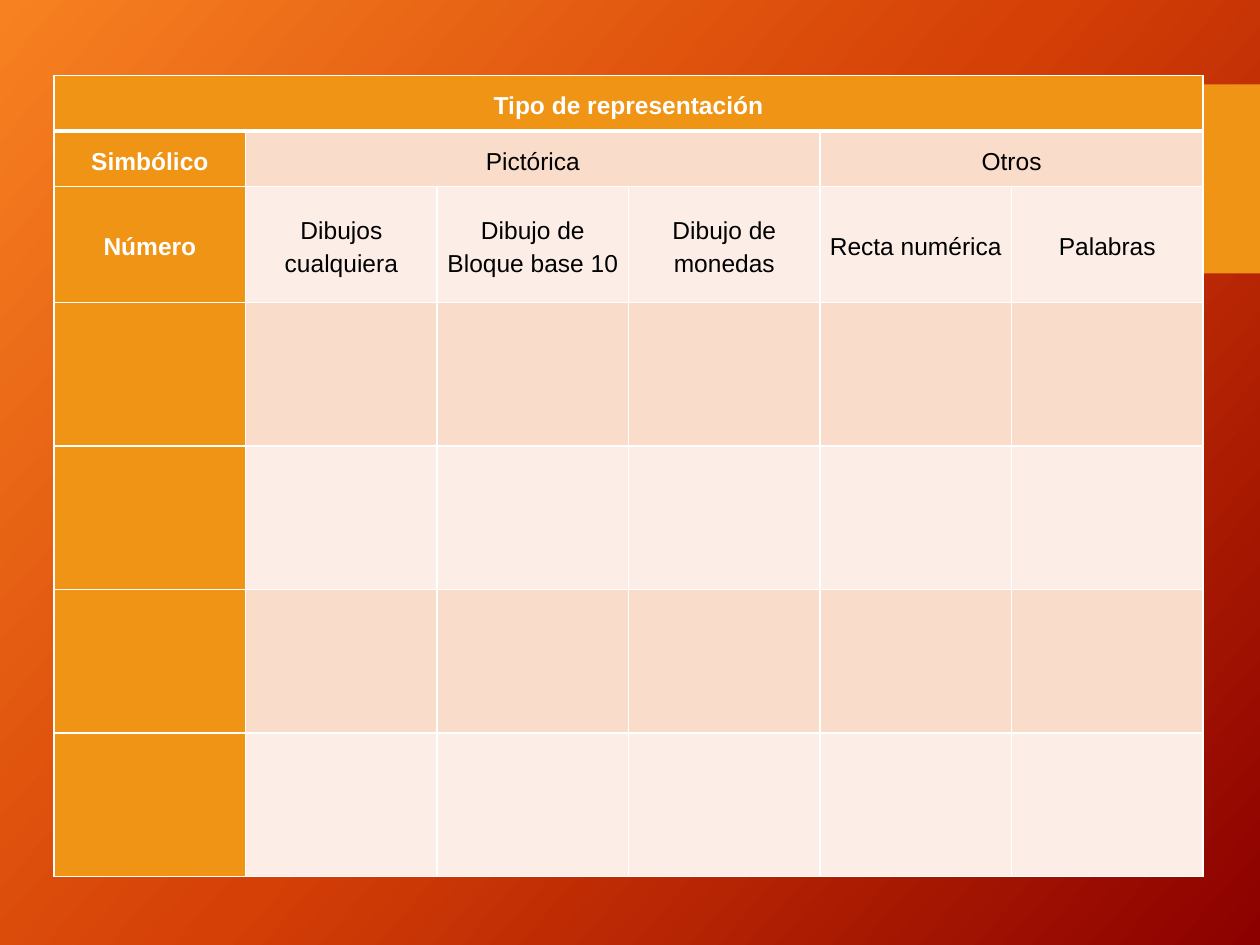
from copy import deepcopy

from pptx import Presentation
from pptx.dml.color import RGBColor
from pptx.enum.shapes import MSO_SHAPE
from pptx.enum.text import MSO_ANCHOR, PP_ALIGN
from pptx.oxml.ns import qn
from pptx.util import Inches, Pt
from lxml.etree import SubElement

COLORS = {
    "accent": "F09415",
    "band_dark": "F9DCCA",
    "band_light": "FCEEE7",
    "white": "FFFFFF",
    "black": "000000",
    "bg_start": "F78121",
    "bg_middle": "D54006",
    "bg_end": "8C0000",
}
COLUMN_WIDTH = 1.52
ROW_HEIGHTS = [0.44, 0.44, 0.92] + [1.14] * 4
COLUMN_COUNT = 6
HEADINGS = [
    {0: "Tipo de representación"},
    {0: "Simbólico", 1: "Pictórica", 4: "Otros"},
    dict(enumerate([
        "Número", "Dibujos cualquiera", "Dibujo de Bloque base 10",
        "Dibujo de monedas", "Recta numérica", "Palabras",
    ])),
]
MERGES = [(0, 0, 5), (1, 1, 3), (1, 4, 5)]
CELL_FORMAT = {
    "vertical_anchor": MSO_ANCHOR.MIDDLE,
    "margin_left": Inches(0.07),
    "margin_right": Inches(0.07),
    "margin_top": 0,
    "margin_bottom": 0,
}
PARAGRAPH_FORMAT = {"alignment": PP_ALIGN.CENTER, "line_spacing": 1.2}


def rgb(name):
    return RGBColor.from_string(COLORS[name])


def apply_format(target, values):
    for name, value in values.items():
        setattr(target, name, value)


def set_background(s):
    fill = s.background.fill
    fill.gradient()
    fill.gradient_angle = 318
    stop_list = s.element.find(".//" + qn("a:gsLst"))
    stop_list.append(deepcopy(stop_list[-1]))
    names = ["bg_start", "bg_middle", "bg_end"]
    for i, (stop, name) in enumerate(zip(fill.gradient_stops, names)):
        stop.position = i / 2
        stop.color.rgb = rgb(name)


def add_side_block(s):
    sp = s.shapes.add_shape(
        MSO_SHAPE.RECTANGLE, Inches(8.43), Inches(0.67), Inches(1.57), Inches(1.5))
    sp.shadow.inherit = False
    sp.fill.solid()
    sp.fill.fore_color.rgb = rgb("accent")
    sp.line.fill.background()


def set_borders(cell, row):
    widths = {"L": 1, "R": 1, "T": 3 if row == 1 else 1, "B": 3 if row == 0 else 1}
    props = cell._tc.get_or_add_tcPr()
    for side, width in widths.items():
        ln = SubElement(props, qn(f"a:ln{side}"), w=str(Pt(width)))
        fill = SubElement(ln, qn("a:solidFill"))
        SubElement(fill, qn("a:srgbClr"), val=COLORS["white"])


def write_cell(cell, text, is_heading):
    p = cell.text_frame.paragraphs[0]
    apply_format(p, PARAGRAPH_FORMAT)
    r = p.add_run()
    r.text = text
    apply_format(r.font, {"name": "Arial", "size": Pt(14), "bold": is_heading})
    r.font.color.rgb = rgb("white" if is_heading else "black")


def add_representation_table(s):
    table = s.shapes.add_table(
        len(ROW_HEIGHTS), COLUMN_COUNT, Inches(0.43), Inches(0.6),
        Inches(COLUMN_WIDTH * COLUMN_COUNT), Inches(sum(ROW_HEIGHTS))).table
    for column in table.columns:
        column.width = Inches(COLUMN_WIDTH)
    for row, height in enumerate(ROW_HEIGHTS):
        table.rows[row].height = Inches(height)
        texts = HEADINGS[row] if row < len(HEADINGS) else {}
        for col in range(COLUMN_COUNT):
            cell = table.cell(row, col)
            is_heading = row == 0 or col == 0
            band = "band_dark" if row % 2 else "band_light"
            set_borders(cell, row)
            cell.fill.solid()
            cell.fill.fore_color.rgb = rgb("accent" if is_heading else band)
            apply_format(cell, CELL_FORMAT)
            if col in texts:
                write_cell(cell, texts[col], is_heading)
    for row, first, last in MERGES:
        table.cell(row, first).merge(table.cell(row, last))


def main():
    prs = Presentation()
    prs.slide_width, prs.slide_height = Inches(10), Inches(7.5)
    s = prs.slides.add_slide(prs.slide_layouts[6])
    set_background(s)
    add_side_block(s)
    add_representation_table(s)
    prs.save("out.pptx")


if __name__ == "__main__":
    main()
